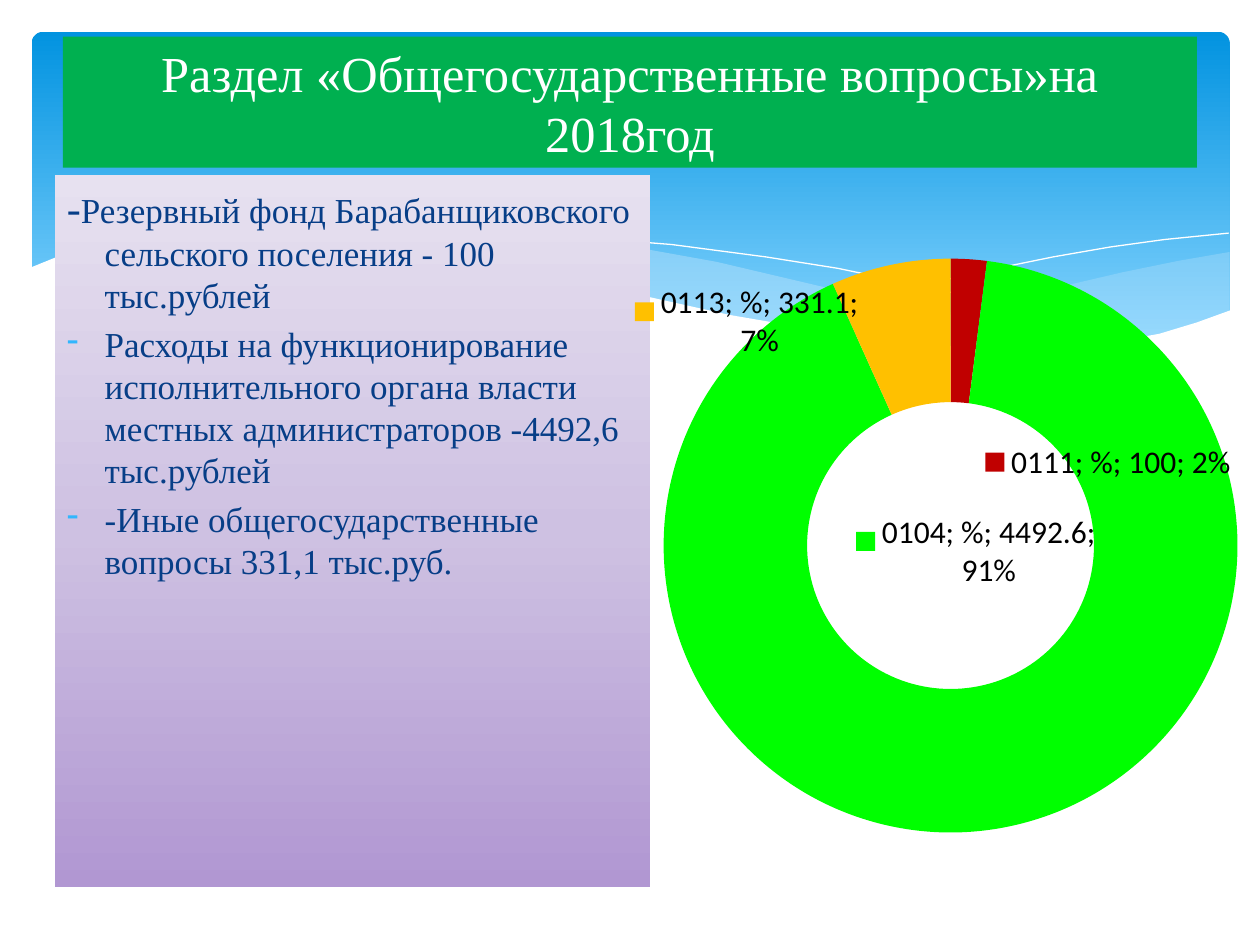
from lxml import etree
from pptx import Presentation, util as u
from pptx.chart import data
from pptx.dml import color
from pptx.enum import chart as ch, shapes, text
from pptx.oxml import parse_xml
from pptx.oxml.ns import nsdecls, qn

FONT = "Times New Roman"
rgb = color.RGBColor.from_string


def set_gradient(sp, angle, stops):
    """Fill sp with (percent, hex) stops, angle in degrees clockwise."""
    gs = "".join(f'<a:gs pos="{pos * 1000}"><a:srgbClr val="{c}"/></a:gs>' for pos, c in stops)
    sp._element.spPr.append(parse_xml(
        f'<a:gradFill {nsdecls("a")} rotWithShape="1"><a:gsLst>{gs}</a:gsLst>'
        f'<a:lin ang="{angle * 60000}" scaled="0"/></a:gradFill>'))


def add_box(kind, left, top, width, height):
    sp = s.shapes.add_shape(kind, u.Cm(left), u.Cm(top), u.Cm(width), u.Cm(height))
    sp.shadow.inherit = False
    sp.line.fill.background()
    return sp


prs = Presentation()
prs.slide_width, prs.slide_height = u.Cm(25.4), u.Cm(19.05)
s = prs.slides.add_slide(prs.slide_layouts[6])

# Blue header
sp = add_box(shapes.MSO_SHAPE.ROUNDED_RECTANGLE, 0.64, 0.64, 24.15, 6.86)
sp.adjustments[0] = 0.034
ln = sp._element.spPr.find(qn("a:ln"))
set_gradient(sp, 90, [(0, "0293E0"), (90, "83D3FE")])
sp._element.spPr.find(qn("a:gradFill")).addnext(ln)
sp.shadow.inherit = False

# Waves: fill, opacity in percent, points in hundredths of a centimetre
waves = [
    ("C6E7FC", 29, [
        (2479, 508), (2375, 526), (2263, 549), (2113, 584), (1913, 630), (1679, 673),
        (1755, 683), (1859, 696), (1953, 704), (2068, 706), (2169, 701), (2258, 691),
        (2339, 673), (2410, 653), (2479, 627)]),
    ("C6E7FC", 40, [
        (2268, 693), (2126, 673), (1968, 645), (1793, 610), (1598, 564), (1445, 528),
        (1306, 503), (1181, 485), (1067, 475), (965, 470), (874, 472), (795, 478),
        (726, 485), (869, 505), (1026, 536), (1140, 564), (1346, 610), (1527, 648),
        (1689, 676), (1834, 696), (1963, 704), (2078, 706), (2177, 704)]),
    (None, 100, [
        (785, 495), (851, 485), (950, 478), (1057, 475), (1191, 480), (1354, 493),
        (1544, 518), (1689, 541), (1847, 574), (2019, 612), (2207, 663), (2304, 691)]),
    (None, 100, [
        (1557, 653), (1707, 612), (1829, 582), (1971, 549), (2123, 518), (2238, 498),
        (2347, 483), (2477, 470)]),
    ("FFFFFF", 100, [
        (2482, 625), (2413, 650), (2337, 673), (2253, 688), (2159, 699), (2055, 704),
        (1933, 699), (1798, 686), (1646, 665), (1471, 635), (1278, 592), (1135, 559),
        (993, 526), (864, 500), (742, 483), (635, 472), (536, 467), (409, 467),
        (302, 475), (216, 490), (132, 511), (58, 541), (58, 836), (2482, 836)]),
]
for fill, opacity, points in waves:
    fb = s.shapes.build_freeform(*points[0], scale=u.Cm(0.01))
    fb.add_line_segments(points[1:], close=fill is not None)
    sp = fb.convert_to_shape()
    sp.shadow.inherit = False
    if fill is None:
        sp.fill.background()
        sp.line.color.rgb = rgb("FFFFFF")
        sp.line.width = u.Pt(0)
        continue
    sp.line.fill.background()
    sp.fill.solid()
    sp.fill.fore_color.rgb = rgb(fill)
    if opacity < 100:
        clr = sp._element.spPr.find(qn("a:solidFill"))[0]
        etree.SubElement(clr, qn("a:alpha"), val=str(opacity * 1000))

# Text panel
sp = add_box(shapes.MSO_SHAPE.RECTANGLE, 1.1, 3.53, 12.01, 14.35)
ln = sp._element.spPr.find(qn("a:ln"))
set_gradient(sp, 270, [(0, "B197D2"), (50, "CEC1E2"), (100, "E7E1F0")])
sp._element.spPr.find(qn("a:gradFill")).addnext(ln)
sp.shadow.inherit = False
tf = sp.text_frame
tf.word_wrap = True
tf.vertical_anchor = text.MSO_ANCHOR.TOP
items = [
    (False, [("-", 24), ("Резервный фонд Барабанщиковского сельского поселения - 100 тыс.рублей", 20)]),
    (True, [("Расходы на функционирование исполнительного органа власти "
             "местных администраторов -4492,6 тыс.рублей", 20)]),
    (True, [("-Иные общегосударственные вопросы 331,1 тыс.руб.", 20)]),
]
for i, (bullet, runs) in enumerate(items):
    p = tf.paragraphs[0] if i == 0 else tf.add_paragraph()
    p.alignment = text.PP_ALIGN.LEFT
    p.space_before = u.Pt(4)
    pPr = p._p.get_or_add_pPr()
    pPr.set("marL", str(u.Cm(0.76)))
    pPr.set("indent", str(-u.Cm(0.76)))
    if bullet:
        etree.SubElement(etree.SubElement(pPr, qn("a:buClr")), qn("a:srgbClr"), val="31B6FD")
        etree.SubElement(pPr, qn("a:buChar"), char="-")
    for words, size in runs:
        r = p.add_run()
        r.text = words
        for key, value in {"name": FONT, "size": u.Pt(size)}.items():
            setattr(r.font, key, value)
        r.font.color.rgb = rgb("073E87")

# Title
sp = add_box(shapes.MSO_SHAPE.RECTANGLE, 1.27, 0.74, 22.86, 2.64)
sp.fill.solid()
sp.fill.fore_color.rgb = rgb("00B050")
tf = sp.text_frame
tf.word_wrap = True
tf.vertical_anchor = text.MSO_ANCHOR.MIDDLE
p = tf.paragraphs[0]
p.alignment = text.PP_ALIGN.CENTER
r = p.add_run()
r.text = "Раздел «Общегосударственные вопросы»на 2018год"
for key, value in {"name": FONT, "size": u.Pt(28.8)}.items():
    setattr(r.font, key, value)
r.font.color.rgb = rgb("FFFFFF")

# Doughnut: category, value, colour, label offset as a share of the chart
slices = [
    ("0111", 100, "C00000", (0.23, 0.19)),
    ("0104", 4492.6, "00FF00", (-0.01, -0.3)),
    ("0113", 331.1, "FFC000", (-0.26, -0.02)),
]
cd = data.CategoryChartData()
cd.categories = [row[0] for row in slices]
cd.add_series("%", [row[1] for row in slices])
chart = s.shapes.add_chart(ch.XL_CHART_TYPE.DOUGHNUT, u.Cm(12.8), u.Cm(3.96),
                           u.Cm(12.6), u.Cm(13.94), cd).chart
chart.has_legend = chart.has_title = False
for key, value in {"name": "Calibri", "size": u.Pt(18)}.items():
    setattr(chart.font, key, value)
chart.font.color.rgb = rgb("000000")
plot = chart.plots[0]
plot._element.find(qn("c:holeSize")).set("val", "50")

area = chart._chartSpace.chart.plotArea
for old in area.findall(qn("c:layout")):
    area.remove(old)
area.insert(0, parse_xml(
    f'<c:layout {nsdecls("c")}><c:manualLayout><c:layoutTarget val="inner"/>'
    '<c:xMode val="edge"/><c:yMode val="edge"/><c:x val="0.01"/><c:y val="0.09"/>'
    '<c:w val="0.99"/><c:h val="0.83"/></c:manualLayout></c:layout>'))

shown = "".join(f'<c:show{name} val="{flag}"/>' for name, flag in [
    ("LegendKey", 1), ("Val", 1), ("CatName", 1), ("SerName", 1), ("Percent", 1), ("BubbleSize", 0)])
shown += "<c:separator>; </c:separator>"
labels = ""
for i, (_, _, fill, (dx, dy)) in enumerate(slices):
    fmt = plot.series[0].points[i].format
    fmt.fill.solid()
    fmt.fill.fore_color.rgb = rgb(fill)
    fmt.line.fill.background()
    labels += (f'<c:dLbl><c:idx val="{i}"/><c:layout><c:manualLayout><c:x val="{dx}"/>'
               f'<c:y val="{dy}"/></c:manualLayout></c:layout>{shown}</c:dLbl>')
for old in plot._element.findall(qn("c:dLbls")):
    plot._element.remove(old)
plot.series[0]._element.find(qn("c:cat")).addprevious(
    parse_xml(f'<c:dLbls {nsdecls("c")}>{labels}{shown}</c:dLbls>'))

prs.save("out.pptx")
